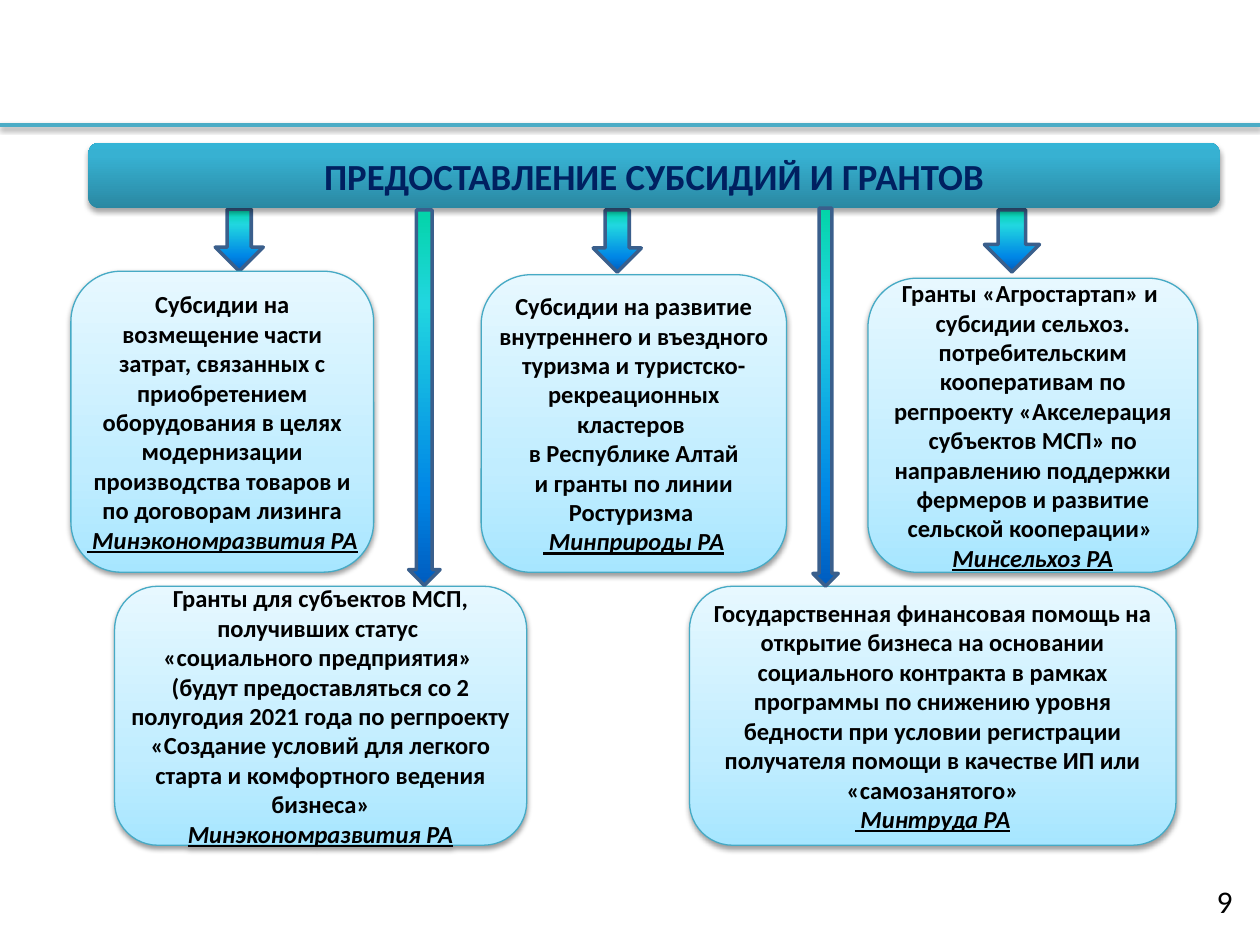
from lxml.etree import SubElement
from pptx import Presentation
from pptx.dml.color import RGBColor
from pptx.enum.shapes import MSO_CONNECTOR, MSO_SHAPE
from pptx.enum.text import MSO_ANCHOR, PP_ALIGN
from pptx.oxml.ns import qn
from pptx.util import Pt

FONT = "Calibri"
COLORS = {"rule": "4BACC6", "title": "002060", "text": "000000",
          "box_line": "46AAC5", "arrow_line": "3A5F8C"}
# Stops as (percent, colour), with the clockwise direction in degrees
GRADIENTS = {
    "banner": ([(0, "2A88A2"), (80, "37B1D2"), (100, "34B4D6")], 270),
    "box": ([(0, "A7E6FF"), (35, "C1EDFF"), (100, "E7F8FF")], 270),
    "arrow": ([(0, "03D4A8"), (25, "21D6E0"), (75, "0087E6"), (100, "005CBF")], 90),
}
TITLE = "ПРЕДОСТАВЛЕНИЕ СУБСИДИЙ И ГРАНТОВ"
PAGE = "9"
BANNER = (50.5, 81.5, 646.5, 37.5)
ROW_BOTTOMS = (327, 483)

# row, left, top, width, paragraphs, ministry
MEASURES = [
    (0, 40.5, 155, 173,
     ["Субсидии на возмещение части затрат, связанных с приобретением оборудования "
      "в целях модернизации производства товаров и по договорам лизинга"],
     " Минэкономразвития РА"),
    (0, 275, 157, 174.5,
     ["Субсидии на развитие внутреннего и въездного туризма и "
      "туристско-рекреационных кластеров ",
      "в Республике Алтай",
      "и гранты по линии Ростуризма "],
     " Минприроды РА"),
    (0, 496, 159, 188.5,
     ["Гранты «Агростартап» и ",
      "субсидии сельхоз. потребительским кооперативам по регпроекту «Акселерация "
      "субъектов МСП» по направлению поддержки фермеров и развитие сельской "
      "кооперации» "],
     "Минсельхоз РА"),
    (1, 65.5, 335, 235.5,
     ["Гранты для субъектов МСП, получивших статус ",
      "«социального предприятия» ",
      "(будут предоставляться со 2 полугодия 2021 года по регпроекту «Создание "
      "условий для легкого старта и комфортного ведения бизнеса»"],
     "Минэкономразвития РА"),
    (1, 394, 335, 278,
     ["Государственная финансовая помощь на открытие бизнеса на основании "
      "социального контракта в рамках программы по снижению уровня бедности при "
      "условии регистрации получателя помощи в качестве ИП или «самозанятого»"],
     " Минтруда РА"),
]
# left, top, width, bottom
SHORT_ARROWS = [(123, 119.5, 27.5, 155), (339, 120, 27.5, 155.5), (562.5, 120, 31.5, 155.5)]
LONG_ARROWS = [(464.5, 119, 14.5, 335), (233.5, 120, 18, 334.5)]


def rgb(name):
    return RGBColor.from_string(COLORS[name])


def fill_gradient(sp, name):
    stops, angle = GRADIENTS[name]
    sp.fill.gradient()
    sp.fill.gradient_angle = 360 - angle
    gs_list = sp._element.spPr.find(".//" + qn("a:gsLst"))
    for gs in list(gs_list):
        gs_list.remove(gs)
    for pos, color in stops:
        gs = SubElement(gs_list, qn("a:gs"), pos=str(pos * 1000))
        SubElement(gs, qn("a:srgbClr"), val=color)


def add_shadow(sp, alpha=38, dist=1.6):
    """Give a shape or connector a soft shadow straight below it."""
    sp_pr = sp._element.spPr
    effects = sp_pr.find(qn("a:effectLst"))
    if effects is None:
        effects = SubElement(sp_pr, qn("a:effectLst"))
    shadow = SubElement(effects, qn("a:outerShdw"), blurRad=str(Pt(3.1)),
                        dist=str(Pt(dist)), dir="5400000", rotWithShape="0")
    color = SubElement(shadow, qn("a:srgbClr"), val="000000")
    SubElement(color, qn("a:alpha"), val=str(alpha * 1000))


def add_gradient_shape(slide, kind, frame, gradient, line=None, width=0):
    sp = slide.shapes.add_shape(kind, *map(Pt, frame))
    sp.shadow.inherit = False
    fill_gradient(sp, gradient)
    if line:
        sp.line.color.rgb = rgb(line)
        sp.line.width = Pt(width)
    else:
        sp.line.fill.background()
    return sp


def add_run(p, text, size, color="text", bold=False, align=PP_ALIGN.CENTER):
    p.alignment = align
    r = p.add_run()
    r.text = text
    r.font.name, r.font.size, r.font.bold = FONT, Pt(size), bold
    r.font.color.rgb = rgb(color)
    return r


def add_arrows(slide, arrows):
    for left, top, width, bottom in arrows:
        add_gradient_shape(slide, MSO_SHAPE.DOWN_ARROW, (left, top, width, bottom - top),
                           "arrow", "arrow_line", 2)


def add_banner(slide):
    sp = add_gradient_shape(slide, MSO_SHAPE.ROUNDED_RECTANGLE, BANNER, "banner")
    add_shadow(sp, 35, 1.8)
    title = slide.shapes.title
    title.left, title.top, title.width, title.height = map(Pt, BANNER)
    tf = title.text_frame
    tf.vertical_anchor = MSO_ANCHOR.MIDDLE
    add_run(tf.paragraphs[0], TITLE, 21, "title", True)
    sp._element.addnext(title._element)


def add_measure(slide, row, left, top, width, paragraphs, ministry):
    frame = (left, top, width, ROW_BOTTOMS[row] - top)
    sp = add_gradient_shape(slide, MSO_SHAPE.ROUNDED_RECTANGLE, frame, "box", "box_line", 0.75)
    add_shadow(sp)
    tf = sp.text_frame
    tf.word_wrap = True
    tf.vertical_anchor = MSO_ANCHOR.MIDDLE
    tf.margin_left = tf.margin_top = tf.margin_right = tf.margin_bottom = 0
    for i, text in enumerate(paragraphs + [ministry]):
        p = tf.add_paragraph() if i else tf.paragraphs[0]
        r = add_run(p, text, 14, bold=True)
    r.font.italic = r.font.underline = True


def main():
    prs = Presentation()
    prs.slide_width, prs.slide_height = Pt(720), Pt(540)
    slide = prs.slides.add_slide(prs.slide_layouts[5])

    rule = slide.shapes.add_connector(MSO_CONNECTOR.STRAIGHT, 0, Pt(71.3), Pt(720), Pt(71.3))
    rule.line.color.rgb = rgb("rule")
    rule.line.width = Pt(2)
    add_shadow(rule)

    number = slide.shapes.add_textbox(*map(Pt, (683.5, 500.5, 28, 29)))
    number.text_frame.word_wrap = True
    add_run(number.text_frame.paragraphs[0], PAGE, 18, align=PP_ALIGN.RIGHT)

    add_arrows(slide, SHORT_ARROWS)
    add_banner(slide)
    for measure in MEASURES:
        add_measure(slide, *measure)
    add_arrows(slide, LONG_ARROWS)
    prs.save("out.pptx")


if __name__ == "__main__":
    main()
